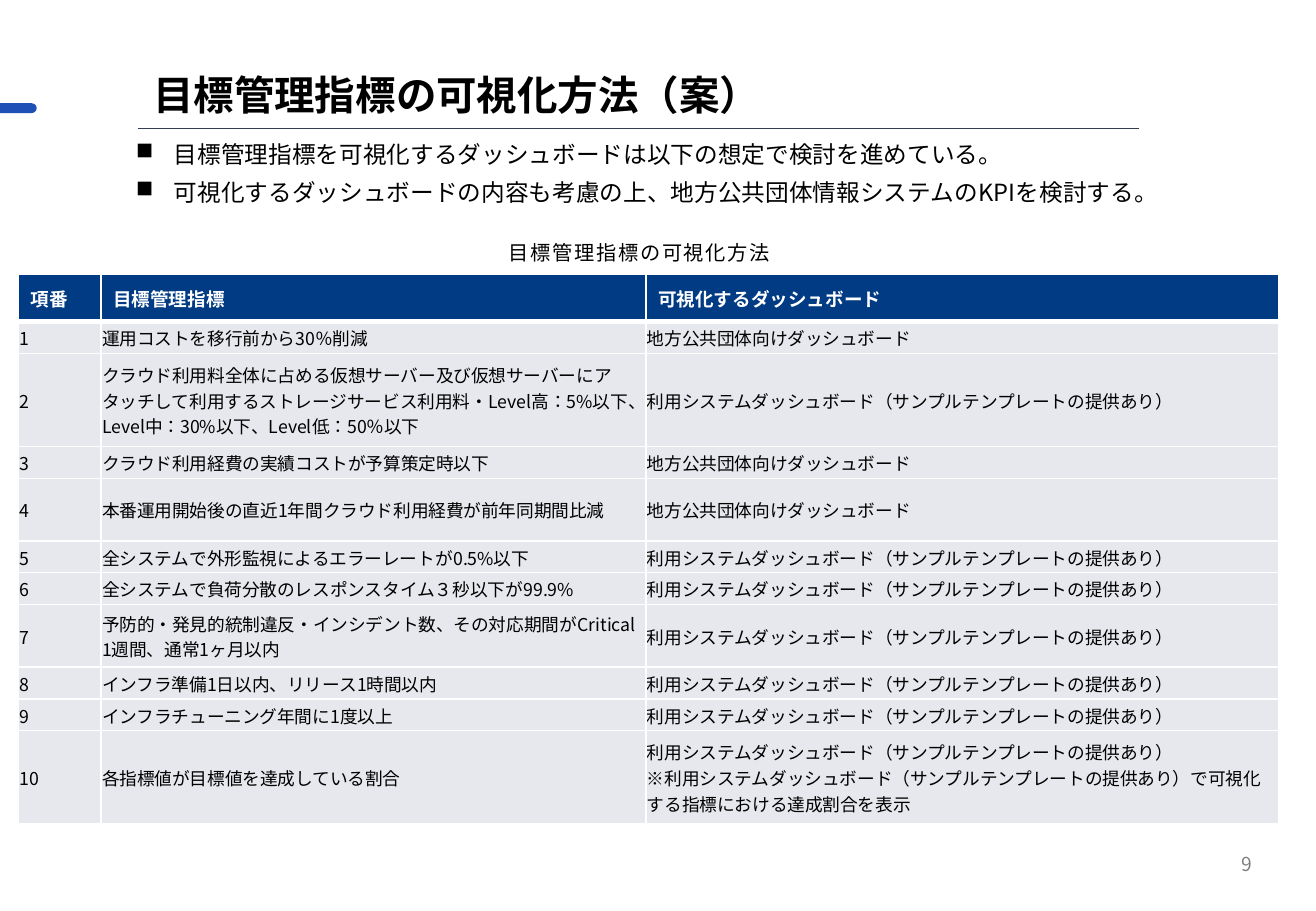
from dataclasses import dataclass

from lxml.etree import SubElement
from pptx import Presentation
from pptx.dml.color import RGBColor
from pptx.enum.lang import MSO_LANGUAGE_ID as Language
from pptx.enum.shapes import MSO_CONNECTOR as Connector, MSO_SHAPE as Shape
from pptx.enum.text import MSO_ANCHOR as Anchor, MSO_AUTO_SIZE as AutoSize, PP_ALIGN as Align
from pptx.oxml.ns import qn
from pptx.util import Pt


@dataclass(frozen=True)
class Theme:
    font: str = "Noto Sans CJK JP"
    text: str = "000000"
    light: str = "FFFFFF"
    muted: str = "808080"
    accent: str = "1E50B5"
    rule: str = "333F50"
    header: str = "003B83"
    body: str = "E7E8ED"
    title_size: float = 24
    bullet_size: float = 14
    caption_size: float = 12
    number_size: float = 11.4
    header_size: float = 11
    cell_size: float = 10.5


class SlideBuilder:
    def __init__(self, page, theme):
        self.page, self.theme = page, theme

    def place(self, box, left, top, width, height):
        box.left, box.top, box.width, box.height = map(Pt, (left, top, width, height))

    def style(self, frame, size, color, bold=False, tracking=0):
        for para in frame.paragraphs:
            for span in para.runs:
                font = span.font
                font.name, font.size, font.bold = self.theme.font, Pt(size), bold
                font.color.rgb = RGBColor.from_string(color)
                font.language_id = Language.JAPANESE
                props = span._r.get_or_add_rPr()
                SubElement(props, qn("a:ea"), typeface=self.theme.font)
                if tracking:
                    props.set("spc", str(round(tracking * 100)))

    def inset(self, holder, left, top, right, bottom):
        holder.margin_left, holder.margin_top = Pt(left), Pt(top)
        holder.margin_right, holder.margin_bottom = Pt(right), Pt(bottom)

    def title(self, text, *place):
        box = self.page.shapes.title
        self.place(box, *place)
        frame = box.text_frame
        frame.text = text
        frame.auto_size, frame.vertical_anchor = AutoSize.NONE, Anchor.MIDDLE
        self.inset(frame, 0, 0, 0, 0)
        frame.paragraphs[0].alignment = Align.LEFT
        self.style(frame, self.theme.title_size, self.theme.text, bold=True)

    def text(self, text, place, size, color, inset=(7.2, 3.6, 7.2, 3.6),
             anchor=Anchor.TOP, align=Align.LEFT, wrap=True, tracking=0):
        frame = self.page.shapes.add_textbox(*map(Pt, place)).text_frame
        frame.text = text
        frame.word_wrap, frame.vertical_anchor = wrap, anchor
        self.inset(frame, *inset)
        for para in frame.paragraphs:
            para.alignment = align
        self.style(frame, size, color, tracking=tracking)
        return frame

    def bullets(self, lines, place, indent, gap):
        frame = self.text("\n".join(lines), place, self.theme.bullet_size,
                          self.theme.text, inset=(4.3,) * 4)
        for para in frame.paragraphs:
            para.space_after = Pt(gap)
            props = para._p.get_or_add_pPr()
            props.set("marL", str(Pt(indent)))
            props.set("indent", str(-Pt(indent)))
            SubElement(props, qn("a:buChar"), char="■")

    def rounded_bar(self, *place):
        bar = self.page.shapes.add_shape(Shape.ROUNDED_RECTANGLE, *map(Pt, place))
        bar.adjustments[0] = 0.5
        bar.shadow.inherit = False
        bar.fill.solid()
        bar.fill.fore_color.rgb = RGBColor.from_string(self.theme.accent)
        bar.line.fill.background()

    def rule(self, left, right, top, weight):
        line = self.page.shapes.add_connector(
            Connector.STRAIGHT, Pt(left), Pt(top), Pt(right), Pt(top))
        line.line.width = Pt(weight)
        line.line.color.rgb = RGBColor.from_string(self.theme.rule)
        SubElement(line._element.spPr, qn("a:effectLst"))

    def cell(self, cell, text, size, color, fill, bold, top, bottom):
        cell.text = text
        cell.vertical_anchor = Anchor.MIDDLE
        self.style(cell.text_frame, size, color, bold)
        props = cell._tc.get_or_add_tcPr()
        for side, weight in (("L", 1), ("R", 1), ("T", top), ("B", bottom)):
            edge = SubElement(props, qn(f"a:ln{side}"), w=str(Pt(weight)))
            paint = SubElement(edge, qn("a:solidFill"))
            SubElement(paint, qn("a:srgbClr"), val=self.theme.light)
        cell.fill.solid()
        cell.fill.fore_color.rgb = RGBColor.from_string(fill)

    def table(self, rows, left, top, widths, heights):
        theme = self.theme
        grid = self.page.shapes.add_table(
            len(rows), len(widths), Pt(left), Pt(top), Pt(sum(widths)), Pt(sum(heights))).table
        for column, width in zip(grid.columns, widths):
            column.width = Pt(width)
        for i, (row, height) in enumerate(zip(rows, heights)):
            grid.rows[i].height = Pt(height)
            for j, text in enumerate(row):
                cell = grid.cell(i, j)
                if i == 0:
                    self.cell(cell, text, theme.header_size, theme.light, theme.header,
                              True, top=1, bottom=3)
                else:
                    self.cell(cell, text, theme.cell_size, theme.text, theme.body,
                              False, top=3 if i == 1 else 1, bottom=1)
                    self.inset(cell, 0.6, 0.6, 0.6, 0)


# Table content: indicator, dashboard and row height
LOCAL = "地方公共団体向けダッシュボード"
SYSTEM = "利用システムダッシュボード（サンプルテンプレートの提供あり）"
ONE_LINE, TWO_LINES, THREE_LINES = 18.9, 37, 55.2
INDICATORS = [
    ("運用コストを移行前から30％削減", LOCAL, ONE_LINE),
    ("クラウド利用料全体に占める仮想サーバー及び仮想サーバーにアタッチして利用する"
     "ストレージサービス利用料・Level高：5%以下、Level中：30%以下、Level低：50％以下",
     SYSTEM, THREE_LINES),
    ("クラウド利用経費の実績コストが予算策定時以下", LOCAL, ONE_LINE),
    ("本番運用開始後の直近1年間クラウド利用経費が前年同期間比減", LOCAL, TWO_LINES),
    ("全システムで外形監視によるエラーレートが0.5%以下", SYSTEM, ONE_LINE),
    ("全システムで負荷分散のレスポンスタイム３秒以下が99.9%", SYSTEM, ONE_LINE),
    ("予防的・発見的統制違反・インシデント数、その対応期間がCritical 1週間、通常1ヶ月以内",
     SYSTEM, TWO_LINES),
    ("インフラ準備1日以内、リリース1時間以内", SYSTEM, ONE_LINE),
    ("インフラチューニング年間に1度以上", SYSTEM, ONE_LINE),
    ("各指標値が目標値を達成している割合",
     f"{SYSTEM}\n※{SYSTEM}で可視化する指標における達成割合を表示", THREE_LINES),
]


def main():
    deck = Presentation()
    deck.slide_width, deck.slide_height = Pt(780), Pt(540)
    theme = Theme()
    builder = SlideBuilder(deck.slides.add_slide(deck.slide_layouts[5]), theme)

    # Heading with its accent bar and rule
    builder.rounded_bar(-5.8, 61.2, 27.6, 5.8)
    builder.title("目標管理指標の可視化方法（案）", 90.7, 39.6, 613.4, 32.4)
    builder.rule(82, 675.4, 76.3, 0.5)

    # Key points
    builder.bullets([
        "目標管理指標を可視化するダッシュボードは以下の想定で検討を進めている。",
        "可視化するダッシュボードの内容も考慮の上、地方公共団体情報システムのKPIを検討する。",
    ], (76.3, 78.5, 615, 51.8), indent=22.5, gap=6)

    # Captioned table
    caption = builder.text("目標管理指標の可視化方法", (301.7, 139.7, 155.5, 17.3),
                           theme.caption_size, theme.text, inset=(0,) * 4,
                           wrap=False, tracking=1)
    caption.auto_size = AutoSize.SHAPE_TO_FIT_TEXT
    caption.paragraphs[0].line_spacing = 1.2
    caption.paragraphs[0].space_after = Pt(4)
    rows = [("項番", "目標管理指標", "可視化するダッシュボード")]
    rows += [(str(number), goal, dashboard)
             for number, (goal, dashboard, _) in enumerate(INDICATORS, 1)]
    heights = [28] + [height for *_, height in INDICATORS]
    builder.table(rows, 10.9, 162.7, (49, 323, 375.2), heights)

    # Page number
    builder.text("9", (573.8, 497.5, 175.7, 28.8), theme.number_size, theme.muted,
                 anchor=Anchor.MIDDLE, align=Align.RIGHT)

    deck.save("out.pptx")


if __name__ == "__main__":
    main()
